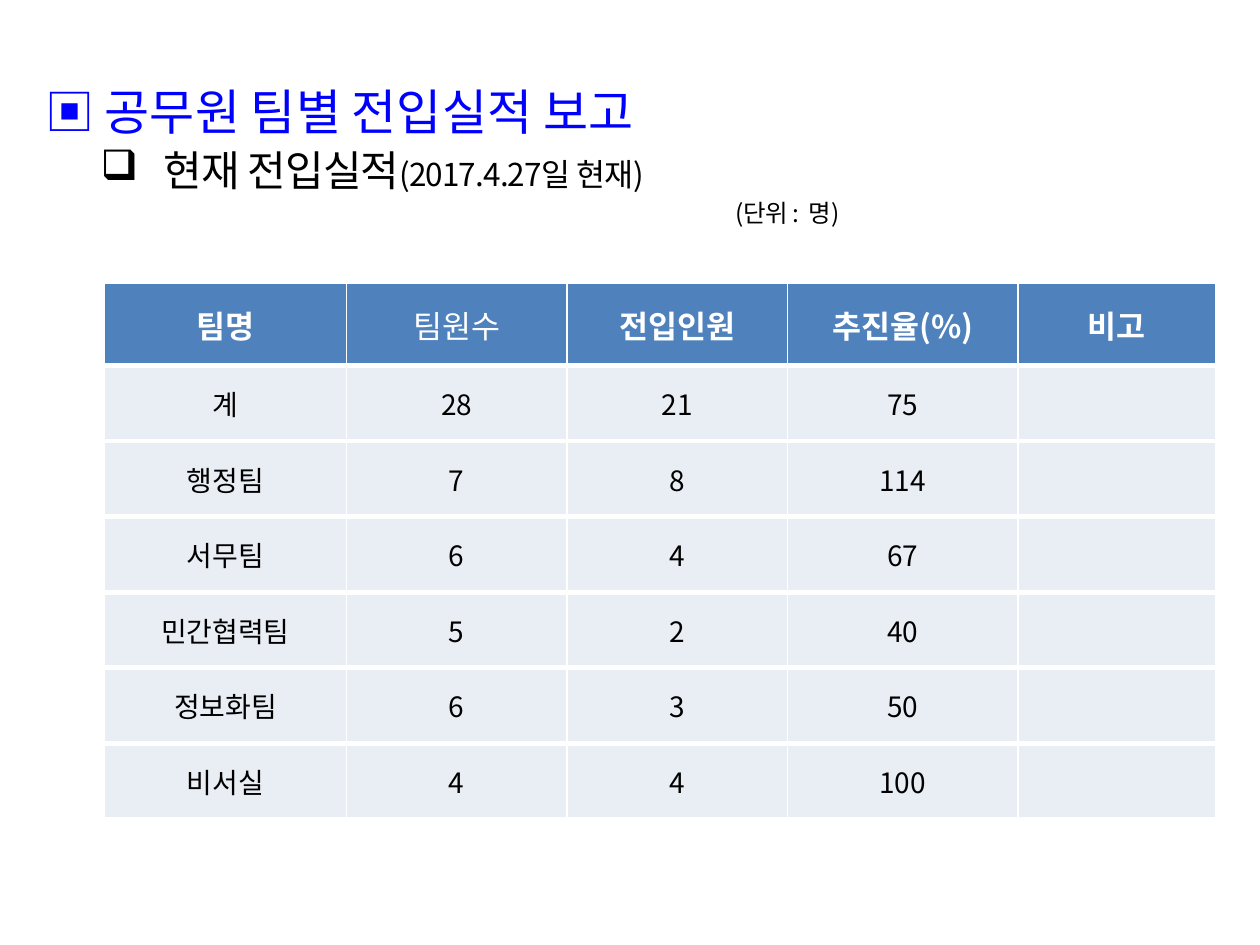
"""Build the slide that reports transfer results by team."""
from lxml import etree
from pptx import Presentation
from pptx.dml.color import RGBColor
from pptx.enum.text import MSO_ANCHOR, PP_ALIGN
from pptx.oxml.ns import qn
from pptx.util import Inches, Pt

MIDDLE = MSO_ANCHOR.MIDDLE
CENTER = PP_ALIGN.CENTER
FONT = "Noto Sans CJK KR"
BLUE = RGBColor(0x00, 0x00, 0xFF)
BLACK = RGBColor(0x00, 0x00, 0x00)
WHITE = RGBColor(0xFF, 0xFF, 0xFF)
HEADER_FILL = RGBColor(0x4F, 0x81, 0xBD)
BODY_FILL = RGBColor(0xE9, 0xED, 0xF4)

COLUMN_WIDTHS = [1.92, 1.75, 1.75, 1.83, 1.57]
ROW_HEIGHTS = [0.65] + [0.6] * 6
HEADERS = ["팀명", "팀원수", "전입인원", "추진율(%)", "비고"]
PLAIN_HEADER = "팀원수"
TEAMS = [
    ["계", "28", "21", "75", ""],
    ["행정팀", "7", "8", "114", ""],
    ["서무팀", "6", "4", "67", ""],
    ["민간협력팀", "5", "2", "40", ""],
    ["정보화팀", "6", "3", "50", ""],
    ["비서실", "4", "4", "100", ""],
]


def add_span(para, text, size, color=BLACK, bold=False, spacing=0):
    """Add formatted text to a paragraph, with letter spacing in points."""
    span = para.add_run()
    span.text = text
    span.font.size = Pt(size)
    span.font.bold = bold
    span.font.color.rgb = color
    span.font.name = FONT
    properties = span.font._element
    east_asian = etree.SubElement(properties, qn("a:ea"))
    east_asian.set("typeface", FONT)
    if spacing:
        properties.set("spc", str(int(spacing * 100)))


def format_para(para, left, hanging=0, space_before=0, bullet=None):
    """Set the indents, spacing and bullet of a paragraph."""
    para.line_spacing = 1.0
    para.space_before = Pt(space_before)
    properties = para._p.get_or_add_pPr()
    properties.set("marL", str(Inches(left)))
    properties.set("indent", str(-Inches(hanging)))
    if bullet:
        color = etree.SubElement(properties, qn("a:buClr"))
        etree.SubElement(color, qn("a:srgbClr")).set("val", str(BLACK))
        etree.SubElement(properties, qn("a:buChar")).set("char", bullet)
    else:
        etree.SubElement(properties, qn("a:buNone"))


def add_headings(page):
    """Add the title, the subtitle with its date, and the unit note."""
    box = page.shapes.add_textbox(Inches(0.2), Inches(0.6), Inches(9.8), Inches(6.38))
    frame = box.text_frame
    frame.word_wrap = True
    title = frame.paragraphs[0]
    format_para(title, 0.56, hanging=0.5, space_before=4.8)
    add_span(title, "▣ 공무원 팀별 전입실적 보고", 28, color=BLUE)
    subtitle = frame.add_paragraph()
    format_para(subtitle, 1, hanging=0.5, space_before=2.4, bullet="❑")
    add_span(subtitle, "현재 전입실적", 24, spacing=-0.5)
    add_span(subtitle, "(2017.4.27일 현재)", 18, spacing=-0.5)
    unit = frame.add_paragraph()
    format_para(unit, 5.54, space_before=1.4)
    add_span(unit, "(단위 :  명)", 14, spacing=-0.5)


def set_borders(cell, top):
    """Draw white borders around a cell, thin at the sides."""
    properties = cell._tc.get_or_add_tcPr()
    widths = {"a:lnL": 1, "a:lnR": 1, "a:lnT": top, "a:lnB": 3}
    for position, (tag, width) in enumerate(widths.items()):
        line = etree.Element(qn(tag), w=str(Pt(width)))
        fill = etree.SubElement(line, qn("a:solidFill"))
        etree.SubElement(fill, qn("a:srgbClr")).set("val", str(WHITE))
        properties.insert(position, line)


def fill_cell(cell, text, fill, size, color, bold=False, top=3):
    """Set the text, fill and borders of a table cell."""
    cell.fill.solid()
    cell.fill.fore_color.rgb = fill
    cell.vertical_anchor = MIDDLE
    set_borders(cell, top)
    if text:
        para = cell.text_frame.paragraphs[0]
        para.alignment = CENTER
        add_span(para, text, size, color=color, bold=bold)


def add_team_table(page):
    """Add the table of results with one row for each team."""
    table = page.shapes.add_table(
        len(ROW_HEIGHTS), len(COLUMN_WIDTHS), Inches(0.83), Inches(2.25),
        Inches(sum(COLUMN_WIDTHS)), Inches(sum(ROW_HEIGHTS))).table
    for column, width in zip(table.columns, COLUMN_WIDTHS):
        column.width = Inches(width)
    for row, height in zip(table.rows, ROW_HEIGHTS):
        row.height = Inches(height)
    for cell, text in zip(table.rows[0].cells, HEADERS):
        fill_cell(cell, text, HEADER_FILL, 18, WHITE, bold=text != PLAIN_HEADER, top=1)
    for row_index, team in enumerate(TEAMS, start=1):
        for cell, text in zip(table.rows[row_index].cells, team):
            fill_cell(cell, text, BODY_FILL, 16, BLACK)


def main():
    """Build and save the deck."""
    deck = Presentation()
    deck.slide_width = Inches(10)
    deck.slide_height = Inches(7.5)
    page = deck.slides.add_slide(deck.slide_layouts[6])
    add_headings(page)
    add_team_table(page)
    deck.save("out.pptx")


if __name__ == "__main__":
    main()
